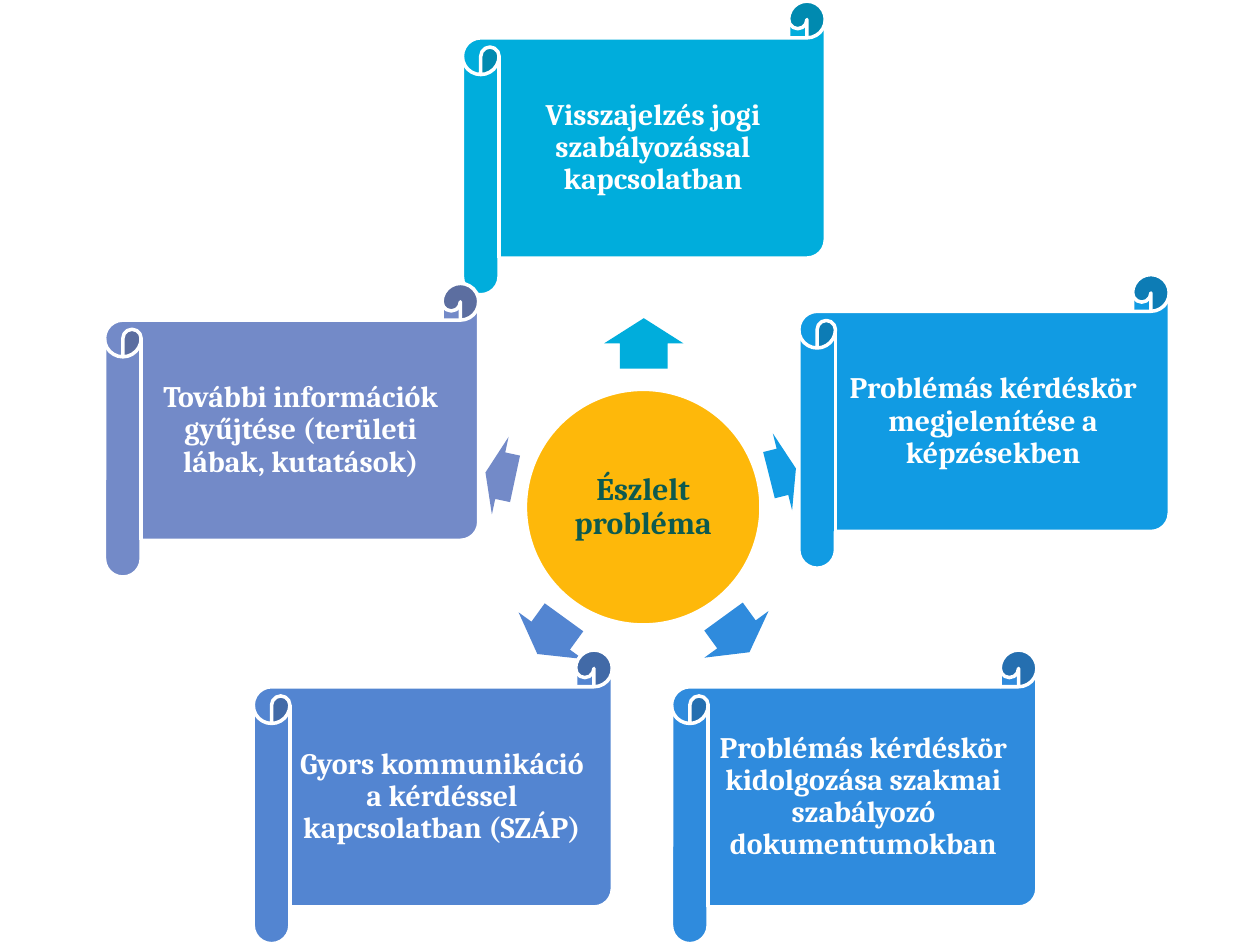
from pptx import Presentation
from pptx import util as u
from pptx.dml.color import RGBColor
from pptx.enum import shapes, text

WHITE = RGBColor(0xFF, 0xFF, 0xFF)
AMBER = RGBColor(0xFE, 0xB8, 0x0A)
DARK_TEAL = RGBColor(0x0D, 0x5A, 0x4F)
CYAN = RGBColor(0x00, 0xAD, 0xDC)
SKY = RGBColor(0x11, 0x9B, 0xE3)
BLUE = RGBColor(0x2F, 0x8B, 0xDD)
STEEL = RGBColor(0x53, 0x85, 0xD1)
LAVENDER = RGBColor(0x73, 0x8A, 0xC8)

FONT = "Cambria"
SCROLL_HEIGHT = 2.33
ARROW_HEIGHT = 0.63

# Each response: wording, colour, scroll (left, top, width), arrow (left, top, width, rotation)
RESPONSES = [
    ("Visszajelzés jogi szabályozással kapcsolatban", CYAN,
     (3.67, 0.01, 2.88), (4.91, 2.41, 0.4, 270)),
    ("Problémás kérdéskör megjelenítése a képzésekben", SKY,
     (6.34, 2.18, 2.94), (6.1, 3.43, 0.22, 345.9)),
    ("Problémás kérdéskör kidolgozása szakmai szabályozó dokumentumokban", BLUE,
     (5.33, 5.16, 2.9), (5.67, 4.72, 0.35, 54)),
    ("Gyors kommunikáció a kérdéssel kapcsolatban (SZÁP)", STEEL,
     (2.01, 5.16, 2.85), (4.19, 4.73, 0.36, 126)),
    ("További információk gyűjtése (területi lábak, kutatások)", LAVENDER,
     (0.83, 2.25, 2.97), (3.85, 3.46, 0.24, 192.1)),
]


def add_filled_shape(slide, kind, box, color):
    """Add a flat preset shape in the given box, in inches."""
    shape = slide.shapes.add_shape(kind, *(u.Inches(length) for length in box))
    shape.shadow.inherit = False
    shape.fill.solid()
    shape.fill.fore_color.rgb = color
    shape.line.fill.background()
    return shape


def add_label(shape, wording, size, color, inset):
    """Outline the shape in white and write a bold centred label in it."""
    shape.line.color.rgb = WHITE
    shape.line.width = u.Pt(2)
    frame = shape.text_frame
    frame.text = wording
    frame.word_wrap = True
    frame.vertical_anchor = text.MSO_ANCHOR.MIDDLE
    frame.margin_left = frame.margin_right = u.Inches(inset)
    frame.margin_top = frame.margin_bottom = u.Inches(inset)
    paragraph = frame.paragraphs[0]
    paragraph.alignment = text.PP_ALIGN.CENTER
    paragraph.line_spacing = 0.9
    font = paragraph.runs[0].font
    font.name = FONT
    font.size = u.Pt(size)
    font.bold = True
    font.color.rgb = color


def add_problem(slide, box):
    """Add the central circle that names the problem."""
    circle = add_filled_shape(slide, shapes.MSO_SHAPE.OVAL, box, AMBER)
    add_label(circle, "Észlelt probléma", 18, DARK_TEAL, 0.03)


def add_response(slide, wording, color, scroll_box, arrow_box):
    """Add an arrow and the scroll it leads to."""
    left, top, width, rotation = arrow_box
    arrow = add_filled_shape(slide, shapes.MSO_SHAPE.RIGHT_ARROW,
                             (left, top, width, ARROW_HEIGHT), color)
    arrow.adjustments[0] = 0.6
    arrow.adjustments[1] = 0.5
    arrow.rotation = rotation
    scroll = add_filled_shape(slide, shapes.MSO_SHAPE.HORIZONTAL_SCROLL,
                              (*scroll_box, SCROLL_HEIGHT), color)
    add_label(scroll, wording, 17, WHITE, 0.02)


def main():
    """Build and save the presentation."""
    presentation = Presentation()
    presentation.slide_width = u.Inches(10)
    presentation.slide_height = u.Inches(7.5)
    slide = presentation.slides.add_slide(presentation.slide_layouts[6])
    add_problem(slide, (4.17, 3.09, 1.87, 1.87))
    for response in RESPONSES:
        add_response(slide, *response)
    presentation.save("out.pptx")


if __name__ == "__main__":
    main()
